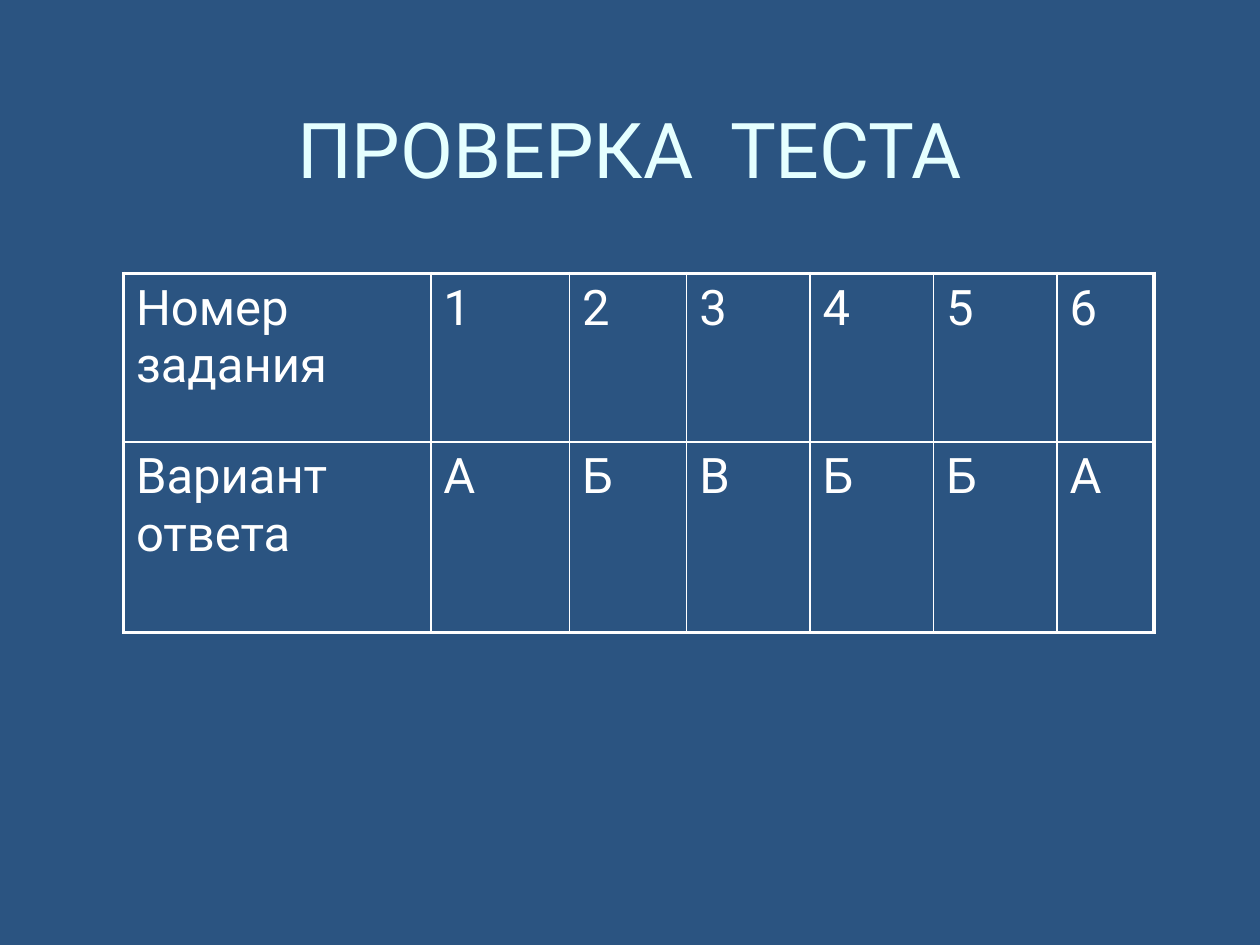
from lxml import etree
from pptx import Presentation
from pptx.dml.color import RGBColor
from pptx.enum.text import MSO_ANCHOR, PP_ALIGN
from pptx.oxml.ns import qn
from pptx.util import Inches, Pt

CENTER = PP_ALIGN.CENTER
MIDDLE = MSO_ANCHOR.MIDDLE
TOP = MSO_ANCHOR.TOP

FONT = "Roboto"
BACKGROUND, TITLE_COLOR, WHITE = "2B5481", "E5FFFF", "FFFFFF"
OUTER_LINE, INNER_LINE = 2.25, 1

TITLE_BOX = (0.5, 0.42, 9, 1.5)
TABLE_BOX = (0.98, 2.17, 8.19, 2.84)
COLUMN_WIDTHS = [2.44, 1.1, 0.93, 0.98, 0.98, 0.98, 0.77]
ROW_HEIGHTS = [1.34, 1.51]
ANSWERS = [
    ["Номер задания", "1", "2", "3", "4", "5", "6"],
    ["Вариант ответа", "А", "Б", "В", "Б", "Б", "А"],
]


def color(hex_value):
    return RGBColor.from_string(hex_value)


def format_text(paragraph, size, hex_value):
    for run in paragraph.runs:
        run.font.name = FONT
        run.font.size = Pt(size)
        run.font.color.rgb = color(hex_value)


def set_borders(cell, widths):
    """Draw white cell borders; widths are points for left, right, top, bottom."""
    properties = cell._tc.get_or_add_tcPr()
    for index, (side, width) in enumerate(zip("LRTB", widths)):
        line = etree.Element(qn(f"a:ln{side}"), w=str(Pt(width)))
        fill = etree.SubElement(line, qn("a:solidFill"))
        etree.SubElement(fill, qn("a:srgbClr"), val=WHITE)
        properties.insert(index, line)


def add_title(slide, box, text):
    title = slide.shapes.title
    title.left, title.top, title.width, title.height = map(Inches, box)
    frame = title.text_frame
    frame.text = text
    frame.word_wrap = True
    frame.vertical_anchor = MIDDLE
    paragraph = frame.paragraphs[0]
    paragraph.alignment = CENTER
    format_text(paragraph, 44, TITLE_COLOR)


def add_answer_table(slide, box, rows):
    last_row, last_column = len(rows) - 1, len(rows[0]) - 1
    table = slide.shapes.add_table(
        len(rows), len(rows[0]), *map(Inches, box)).table
    table.first_row = table.horz_banding = False
    for column, width in zip(table.columns, COLUMN_WIDTHS):
        column.width = Inches(width)
    for row, height in zip(table.rows, ROW_HEIGHTS):
        row.height = Inches(height)

    for row_index, texts in enumerate(rows):
        for column_index, text in enumerate(texts):
            cell = table.cell(row_index, column_index)
            cell.text_frame.text = text
            cell.vertical_anchor = TOP
            cell.fill.background()
            format_text(cell.text_frame.paragraphs[0], 28, WHITE)
            on_edge = (column_index == 0, column_index == last_column,
                       row_index == 0, row_index == last_row)
            set_borders(cell, [OUTER_LINE if edge else INNER_LINE
                               for edge in on_edge])


def main():
    presentation = Presentation()
    presentation.slide_width, presentation.slide_height = Inches(10), Inches(7.5)
    title_only = presentation.slide_layouts[5]
    slide = presentation.slides.add_slide(title_only)
    slide.background.fill.solid()
    slide.background.fill.fore_color.rgb = color(BACKGROUND)
    add_title(slide, TITLE_BOX, "ПРОВЕРКА  ТЕСТА")
    add_answer_table(slide, TABLE_BOX, ANSWERS)
    presentation.save("out.pptx")


if __name__ == "__main__":
    main()
